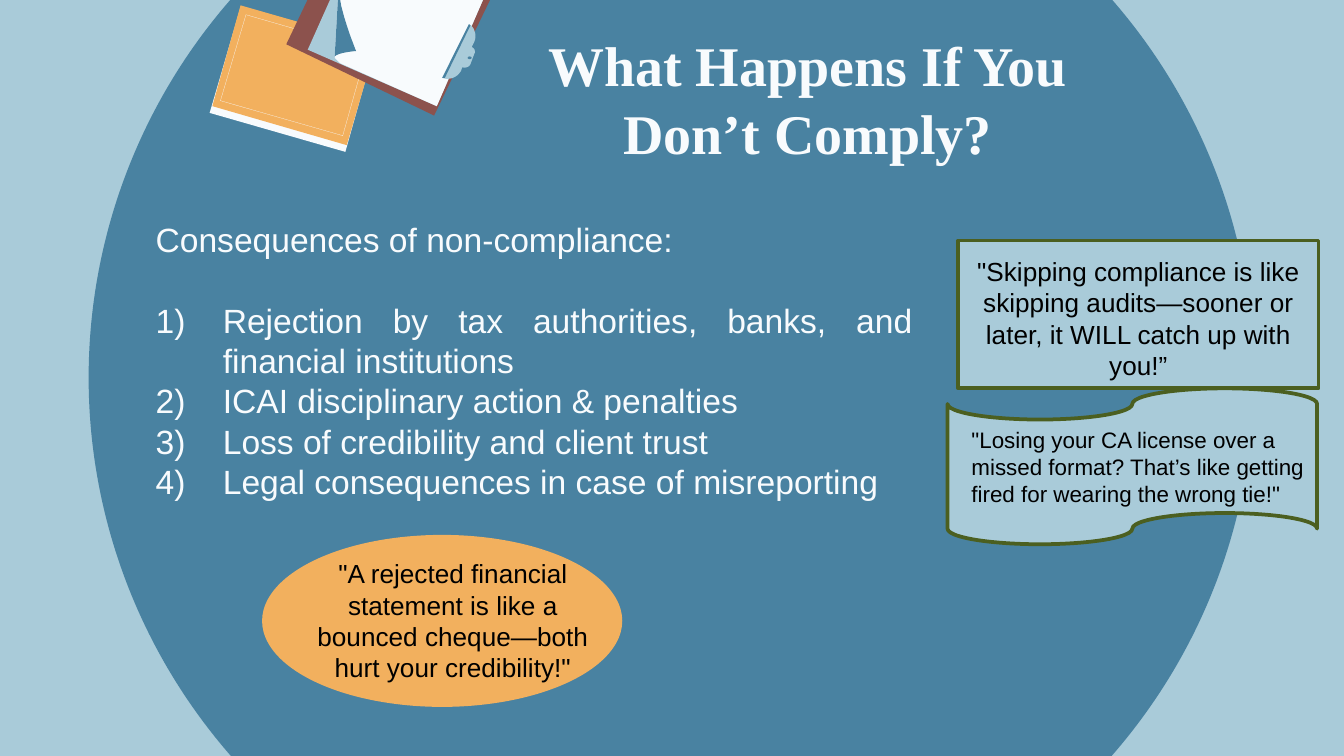
from dataclasses import dataclass

from lxml.etree import SubElement
from pptx import Presentation
from pptx.dml.color import RGBColor
from pptx.enum.shapes import MSO_SHAPE
from pptx.enum.text import MSO_ANCHOR, MSO_AUTO_SIZE, PP_ALIGN
from pptx.oxml.ns import qn
from pptx.util import Inches, Pt


@dataclass(frozen=True)
class Theme:
    """Colours, fonts and type sizes of the slide."""
    sky: str = "A9CBD9"
    sea: str = "4982A1"
    orange: str = "F2B05E"
    brown: str = "8C524D"
    paper: str = "F8FBFD"
    olive: str = "4B5F20"
    ink: str = "000000"
    title_font: str = "Times New Roman"
    text_font: str = "Arial"
    title: int = 30
    body: int = 18
    quote: int = 14
    small: int = 12
    leading: float = 1.2


THEME = Theme()


def paint(sp, fill=None, line=None, width=2):
    """Set the fill and outline of a shape and drop its shadow."""
    sp.shadow.inherit = False
    if fill:
        sp.fill.solid()
        sp.fill.fore_color.rgb = RGBColor.from_string(fill)
    else:
        sp.fill.background()
    if line:
        sp.line.color.rgb = RGBColor.from_string(line)
        sp.line.width = Pt(width)
    else:
        sp.line.fill.background()
    return sp


def add_preset(shapes, kind, box, fill, line=None):
    """Add a painted preset shape."""
    return paint(shapes.add_shape(kind, *map(Inches, box)), fill, line)


def write(tf, lines, size, color, font, align=PP_ALIGN.LEFT, bold=False, inset=0.1, gap=0.05):
    """Fill a text frame with one paragraph for each line."""
    tf.word_wrap = True
    tf.auto_size = MSO_AUTO_SIZE.NONE
    tf.vertical_anchor = MSO_ANCHOR.TOP
    tf.margin_left = tf.margin_right = Inches(inset)
    tf.margin_top = tf.margin_bottom = Inches(gap)
    tf.text = "\n".join(lines)
    for p in tf.paragraphs:
        p.alignment = align
        p.line_spacing = Pt(size * THEME.leading)
        for r in p.runs:
            r.font.size, r.font.name, r.font.bold = Pt(size), font, bold
            r.font.color.rgb = RGBColor.from_string(color)


def bezier(start, curve, steps=8):
    """Return points along a cubic curve after its start."""
    nodes = [start, curve[:2], curve[2:4], curve[4:]]
    points = []
    for i in range(1, steps + 1):
        t = i / steps
        weights = ((1 - t) ** 3, 3 * t * (1 - t) ** 2, 3 * t * t * (1 - t), t ** 3)
        points.append(tuple(sum(w * n[k] for w, n in zip(weights, nodes)) for k in (0, 1)))
    return points


def add_outline(shapes, origin, segments, fill=None, line=None, width=2):
    """Add a closed outline of points and cubic curves measured from the origin."""
    points = [segments[0]]
    for seg in segments[1:]:
        points += [seg] if len(seg) == 2 else bezier(points[-1], seg)
    grid = [(round(x * 1000), round(y * 1000)) for x, y in points]
    builder = shapes.build_freeform(*grid[0], scale=Inches(1) / 1000)
    builder.add_line_segments(grid[1:], close=True)
    return paint(builder.convert_to_shape(*map(Inches, origin)), fill, line, width)


def add_disc(slide, box):
    """Place the large disc behind everything else."""
    sp = add_preset(slide.shapes, MSO_SHAPE.OVAL, box, THEME.sea)
    sp.element.getparent().insert(2, sp.element)


def add_title(slide, box, text):
    """Move and format the title placeholder."""
    sp = slide.shapes.title
    sp.left, sp.top, sp.width, sp.height = map(Inches, box)
    write(sp.text_frame, [text], THEME.title, THEME.paper, THEME.title_font,
          PP_ALIGN.CENTER, bold=True, gap=0.1)


def add_consequences(slide, box, heading, items):
    """Place the heading and its numbered list."""
    tf = slide.shapes.add_textbox(*map(Inches, box)).text_frame
    write(tf, [heading, *items], THEME.body, THEME.paper, THEME.text_font,
          PP_ALIGN.JUSTIFY, gap=0.1)
    tf.paragraphs[1].space_before = Pt(THEME.body * THEME.leading)
    for p in tf.paragraphs[1:]:
        pPr = p._p.get_or_add_pPr()
        pPr.set("marL", str(Inches(0.5)))
        pPr.set("indent", str(-Inches(0.5)))
        SubElement(pPr, qn("a:buAutoNum"), type="arabicParenR")


def add_book(slide, box):
    """Draw the tilted book."""
    x, y = box[:2]
    shapes = slide.shapes.add_group_shape().shapes
    cover = [(1.24, 0.29), (1.02, 1.04), (0.02, 0.75), (0.23, 0)]
    pages = [(1.22, 0.34), (1.01, 1.09), (0, 0.8), (0.22, 0.05)]
    frame = [(0.08, 0.71), (0.99, 0.97), (1.17, 0.33), (0.27, 0.07)]
    add_outline(shapes, (x, y), pages, THEME.paper)
    add_outline(shapes, (x, y), cover, THEME.orange)
    add_outline(shapes, (x, y), frame, line=THEME.paper, width=0.12)


def add_clipboard(slide, box):
    """Draw the tilted clipboard with its page, fold and clip."""
    x, y = box[:2]
    shapes = slide.shapes.add_group_shape().shapes
    parts = [
        (THEME.brown, [(0, 0.94), (0.45, 0), (1.55, 0.54), (1.1, 1.47)]),
        (THEME.sky, [(0.16, 0.98), (0.54, 0.13), (1.49, 0.55), (1.12, 1.4)]),
        (THEME.paper, [(0.4, 0.46), (0.54, 0.13), (1.49, 0.55), (1.12, 1.4),
                       (0.4, 1.08), (0.36, 1.04), (0.39, 0.51)]),
        (THEME.sea, [(0.39, 0.51), (0.39, 0.68, 0.52, 0.99, 0.52, 0.99),
                     (0.52, 0.99, 0.39, 1, 0.36, 1.03), (0.36, 1.04)]),
        (THEME.sky, [(1.16, 1.19), (1.36, 0.79), (1.4, 0.81, 1.42, 0.87, 1.4, 0.92),
                     (1.38, 0.96), (1.4, 0.97, 1.41, 0.99, 1.4, 1.01),
                     (1.37, 1.09), (1.36, 1.11, 1.33, 1.12, 1.31, 1.11),
                     (1.3, 1.14), (1.27, 1.19, 1.21, 1.21, 1.16, 1.19)]),
        (THEME.sea, [(1.16, 1.19), (1.36, 0.79), (1.37, 0.8), (1.18, 1.19)]),
    ]
    for fill, segments in parts:
        add_outline(shapes, (x, y), segments, fill)
    add_preset(shapes, MSO_SHAPE.OVAL, (x + 1.35, y + 1.03, 0.03, 0.02), THEME.sea)


def add_quote(slide, box, kind, lines, size, fill, line=None, offset=(0, 0),
              width=None, align=PP_ALIGN.CENTER):
    """Place a shape and its quotation, offset from the shape's corner."""
    x, y, w, h = box
    add_preset(slide.shapes, kind, box, fill, line)
    dx, dy = offset
    area = (x + dx, y + dy, width or w, h - dy)
    tf = slide.shapes.add_textbox(*map(Inches, area)).text_frame
    write(tf, lines, size, THEME.ink, THEME.text_font, align)


def main():
    """Build the slide and save it."""
    prs = Presentation()
    prs.slide_width = Inches(10)
    prs.slide_height = prs.slide_width * 9 // 16
    s = prs.slides.add_slide(prs.slide_layouts[5])
    s.background.fill.solid()
    s.background.fill.fore_color.rgb = RGBColor.from_string(THEME.sky)
    add_disc(s, (0.66, -1.49, 8.67, 8.6))
    add_title(s, (3.47, 0.13, 5.08, 0.63), "What Happens If You Don’t Comply?")
    add_consequences(s, (1.06, 1.53, 5.83, 3.74), "Consequences of non-compliance:", [
        "Rejection by tax authorities, banks, and financial institutions",
        "ICAI disciplinary action & penalties",
        "Loss of credibility and client trust",
        "Legal consequences in case of misreporting"])
    add_book(s, (1.56, 0.04, 1.24, 1.09))
    add_clipboard(s, (2.13, -0.61, 1.55, 1.47))
    add_quote(s, (7.13, 1.79, 2.68, 1.1), MSO_SHAPE.RECTANGLE,
              ['"Skipping compliance is like skipping audits—sooner or later, '
               'it WILL catch up with you!”'],
              THEME.quote, THEME.sky, THEME.olive, offset=(0, 0.06))
    add_quote(s, (1.95, 3.98, 2.68, 1.28), MSO_SHAPE.OVAL,
              ['"A rejected financial statement is like a bounced cheque—both '
               'hurt your credibility!"'],
              THEME.quote, THEME.orange, offset=(0.22, 0.12), width=2.4)
    add_quote(s, (7.05, 2.89, 2.75, 1.16), MSO_SHAPE.FLOWCHART_PUNCHED_TAPE,
              ['"Losing your CA license over a', "missed format? That’s like getting",
               'fired for wearing the wrong tie!"'],
              THEME.small, THEME.sky, THEME.olive, offset=(0.08, 0.23), width=2.8,
              align=PP_ALIGN.LEFT)
    prs.save("out.pptx")


if __name__ == "__main__":
    main()
